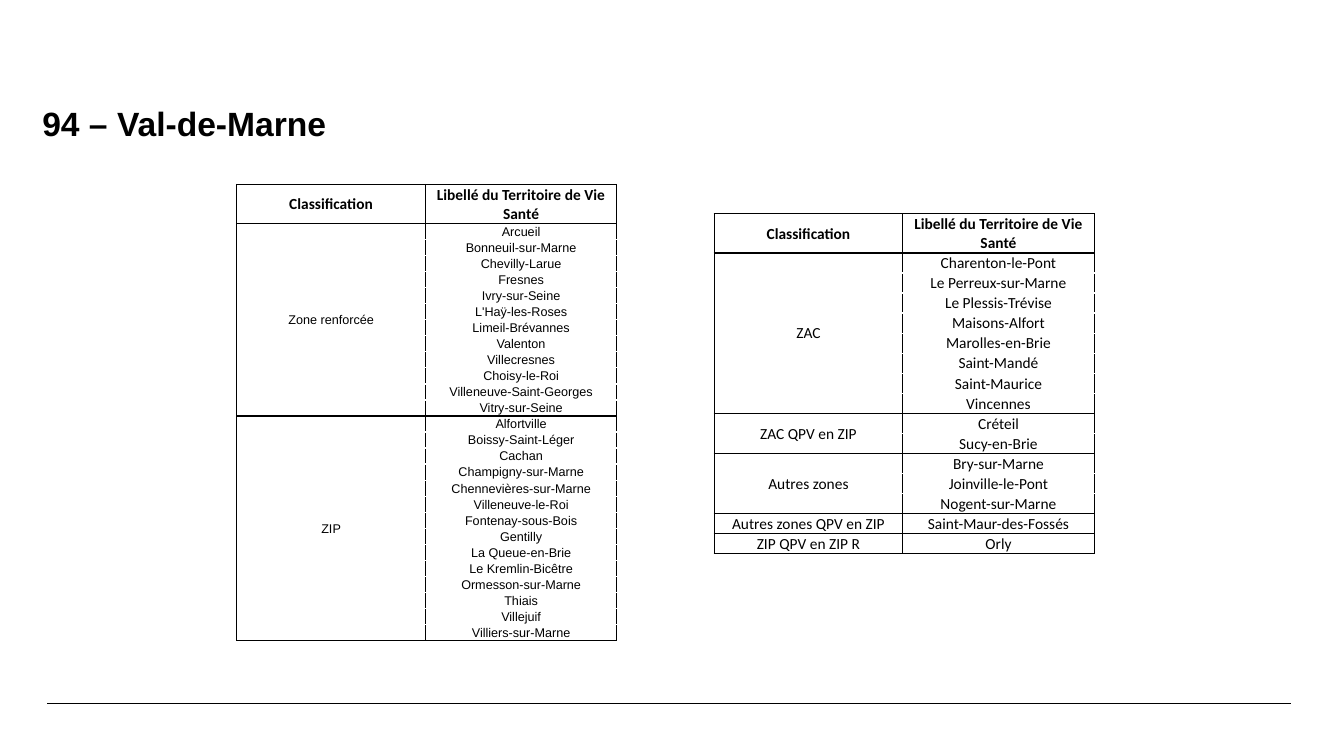
from dataclasses import dataclass

import pptx
import pptx.dml.color
import pptx.enum.shapes
import pptx.enum.text
import pptx.oxml
import pptx.oxml.ns
import pptx.slide
import pptx.table
import pptx.text.text
import pptx.util

Pt = pptx.util.Pt
COLOURS = {"ink": "000000", "paper": "FFFFFF"}
HEADINGS = ("Classification", "Libellé du Territoire de Vie Santé")
COLUMN_WIDTHS = (134.64, 136.8)
HEADER_HEIGHT = 27.6


@dataclass(frozen=True)
class Zone:
    label: str
    towns: tuple[str, ...]


@dataclass(frozen=True)
class ZoneTable:
    left: float
    top: float
    row_height: float
    font: str
    size: float
    zones: tuple[Zone, ...]


@dataclass(frozen=True)
class Rule:
    start: float
    end: float


ZONE_TABLES = (
    ZoneTable(169.2, 131.8, 11.47, "Arial", 9, (
        Zone("Zone renforcée", (
            "Arcueil", "Bonneuil-sur-Marne", "Chevilly-Larue", "Fresnes",
            "Ivry-sur-Seine", "L'Haÿ-les-Roses", "Limeil-Brévannes", "Valenton",
            "Villecresnes", "Choisy-le-Roi", "Villeneuve-Saint-Georges",
            "Vitry-sur-Seine")),
        Zone("ZIP", (
            "Alfortville", "Boissy-Saint-Léger", "Cachan", "Champigny-sur-Marne",
            "Chennevières-sur-Marne", "Villeneuve-le-Roi", "Fontenay-sous-Bois",
            "Gentilly", "La Queue-en-Brie", "Le Kremlin-Bicêtre",
            "Ormesson-sur-Marne", "Thiais", "Villejuif", "Villiers-sur-Marne")),
    )),
    ZoneTable(510.2, 152.8, 14.2, "Calibri", 11, (
        Zone("ZAC", (
            "Charenton-le-Pont", "Le Perreux-sur-Marne", "Le Plessis-Trévise",
            "Maisons-Alfort", "Marolles-en-Brie", "Saint-Mandé", "Saint-Maurice",
            "Vincennes")),
        Zone("ZAC QPV en ZIP", ("Créteil", "Sucy-en-Brie")),
        Zone("Autres zones", (
            "Bry-sur-Marne", "Joinville-le-Pont", "Nogent-sur-Marne")),
        Zone("Autres zones QPV en ZIP", ("Saint-Maur-des-Fossés",)),
        Zone("ZIP QPV en ZIP R", ("Orly",)),
    )),
)
FOOTER_RULES = (Rule(33.84, 918.72), Rule(38.16, 922.32))


def colour(name: str) -> pptx.dml.color.RGBColor:
    return pptx.dml.color.RGBColor.from_string(COLOURS[name])


def add_span(para: pptx.text.text._Paragraph, text: str, font: str,
             size: float, bold: bool) -> None:
    span = para.add_run()
    span.text = text
    span.font.name = font
    span.font.size = Pt(size)
    span.font.bold = bold
    span.font.color.rgb = colour("ink")


def format_cell(cell: pptx.table._Cell, top: str = "ink", bottom: str = "ink") -> None:
    cell.margin_left = cell.margin_right = cell.margin_top = Pt(0.72)
    cell.margin_bottom = 0
    cell.vertical_anchor = pptx.enum.text.MSO_ANCHOR.MIDDLE
    cell.fill.solid()
    cell.fill.fore_color.rgb = colour("paper")
    sides = (("lnL", "ink"), ("lnR", "ink"), ("lnT", top), ("lnB", bottom))
    for index, (side, name) in enumerate(sides):
        border = pptx.oxml.parse_xml(
            f'<a:{side} {pptx.oxml.ns.nsdecls("a")} w="{Pt(1)}"><a:solidFill>'
            f'<a:srgbClr val="{COLOURS[name]}"/></a:solidFill></a:{side}>')
        cell._tc.get_or_add_tcPr().insert(index, border)


def fill_cell(cell: pptx.table._Cell, text: str, font: str, size: float,
              bold: bool = False) -> None:
    para = cell.text_frame.paragraphs[0]
    para.alignment = pptx.enum.text.PP_ALIGN.CENTER
    add_span(para, text, font, size, bold)


def add_zone_table(page: pptx.slide.Slide, spec: ZoneTable) -> None:
    count = sum(len(zone.towns) for zone in spec.zones)
    frame = page.shapes.add_table(
        count + 1, len(HEADINGS), Pt(spec.left), Pt(spec.top),
        Pt(sum(COLUMN_WIDTHS)), Pt(HEADER_HEIGHT + count * spec.row_height))
    table = frame.table
    table.first_row = table.horz_banding = False
    for column, width in zip(table.columns, COLUMN_WIDTHS):
        column.width = Pt(width)
    for index, row in enumerate(table.rows):
        row.height = Pt(spec.row_height if index else HEADER_HEIGHT)
    for index, heading in enumerate(HEADINGS):
        cell = table.cell(0, index)
        format_cell(cell)
        fill_cell(cell, heading, "Calibri", 11, bold=True)

    first = 1
    for zone in spec.zones:
        last = first + len(zone.towns) - 1
        for index, town in enumerate(zone.towns, first):
            format_cell(table.cell(index, 0))
            cell = table.cell(index, 1)
            format_cell(cell, "ink" if index == first else "paper",
                        "ink" if index == last else "paper")
            fill_cell(cell, town, spec.font, spec.size)
        label = table.cell(first, 0)
        if last > first:
            label.merge(table.cell(last, 0))
        fill_cell(label, zone.label, spec.font, spec.size)
        first = last + 1


def add_rule(page: pptx.slide.Slide, rule: Rule) -> None:
    line = page.shapes.add_connector(
        pptx.enum.shapes.MSO_CONNECTOR.STRAIGHT,
        Pt(rule.start), Pt(502.56), Pt(rule.end), Pt(502.56))
    line.line.width = Pt(0.8)
    line.line.color.rgb = colour("ink")
    line._element.spPr.append(
        pptx.oxml.parse_xml(f'<a:effectLst {pptx.oxml.ns.nsdecls("a")}/>'))


def add_title(page: pptx.slide.Slide, text: str) -> None:
    title = page.shapes.title
    title.left, title.top, title.width, title.height = (
        Pt(20.88), Pt(73.44), Pt(728.64), Pt(48.96))
    box = title.text_frame
    box.word_wrap = True
    box.auto_size = pptx.enum.text.MSO_AUTO_SIZE.NONE
    box.vertical_anchor = pptx.enum.text.MSO_ANCHOR.TOP
    box.margin_left = Pt(9.36)
    box.margin_right = box.margin_top = box.margin_bottom = 0
    para = box.paragraphs[0]
    para.alignment = pptx.enum.text.PP_ALIGN.LEFT
    add_span(para, text, "Arial", 24, True)


def main() -> None:
    deck = pptx.Presentation()
    deck.slide_width, deck.slide_height = Pt(960), Pt(540)
    page = deck.slides.add_slide(deck.slide_layouts.get_by_name("Title Only"))
    for rule in FOOTER_RULES:
        add_rule(page, rule)
    add_title(page, "94 – Val-de-Marne")
    for zone_table in ZONE_TABLES:
        add_zone_table(page, zone_table)
    deck.save("out.pptx")


if __name__ == "__main__":
    main()
